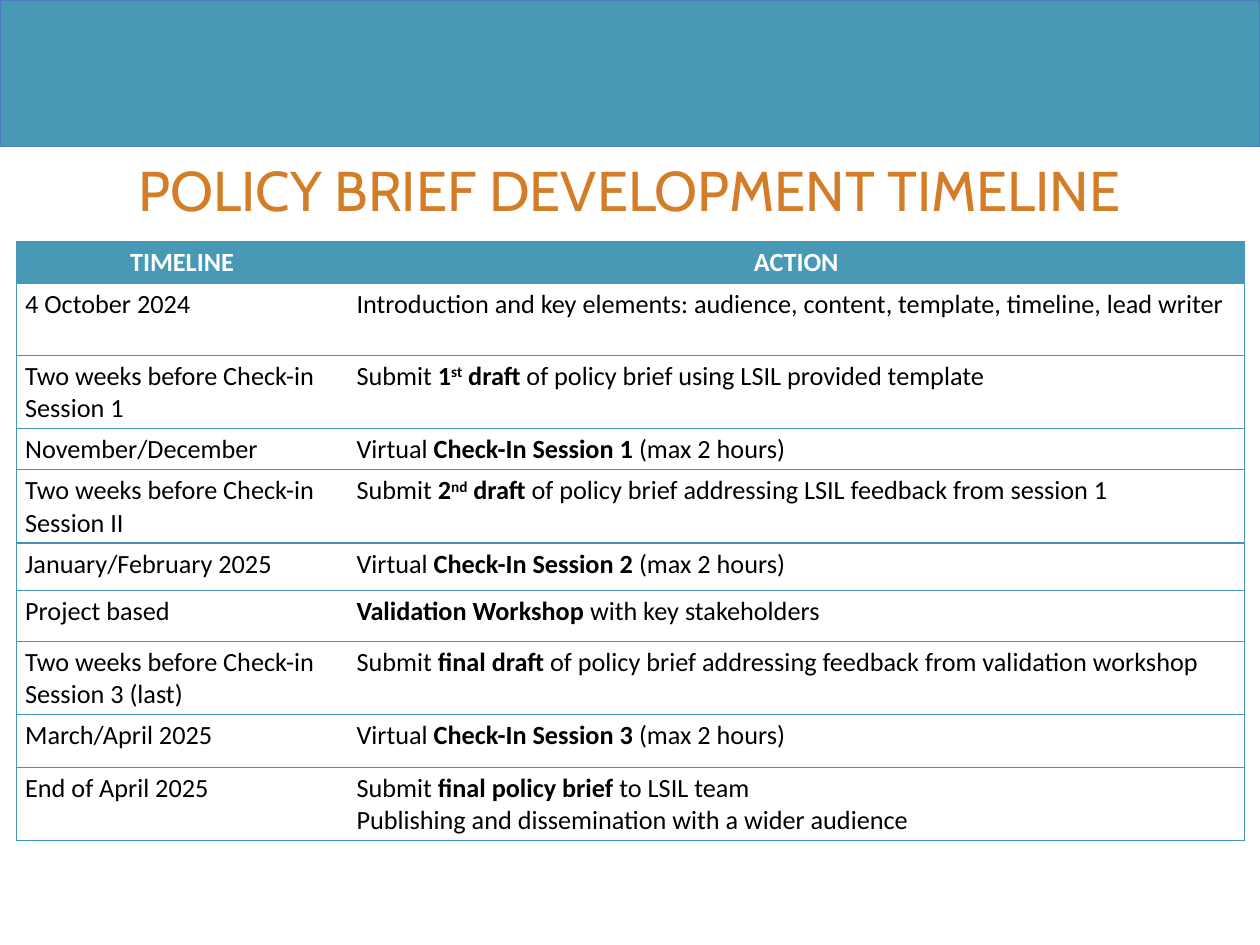
from dataclasses import dataclass

from lxml import etree
from pptx import Presentation
from pptx.dml.color import RGBColor
from pptx.enum.shapes import MSO_SHAPE
from pptx.enum.text import MSO_ANCHOR, PP_ALIGN
from pptx.oxml.ns import qn
from pptx.util import Inches, Pt

RECTANGLE = MSO_SHAPE.RECTANGLE
MIDDLE = MSO_ANCHOR.MIDDLE
LEFT, CENTER = PP_ALIGN.LEFT, PP_ALIGN.CENTER
WIDTH, HEIGHT = 10, 7.5


@dataclass(frozen=True)
class Theme:
    band: str = "4799B5"
    band_line: str = "4B7EBC"
    rule: str = "4397B4"
    title: str = "D37D28"
    text: str = "000000"
    paper: str = "FFFFFF"
    title_font: str = "Cabin"
    body_font: str = "Calibri"
    title_size: int = 32
    body_size: int = 15
    line_width: float = 0.75


THEME = Theme()
COLUMN_WIDTHS = (2.63, 7.12)
HEADINGS = ("TIMELINE", "ACTION")
# Row height, time, action lines; *bold* and ^superscript^ mark the runs.
STEPS = (
    (0.57, "4 October 2024",
     "Introduction and key elements: audience, content, template, timeline, lead writer"),
    (0.57, "Two weeks before Check-in Session 1",
     "Submit *1^st^ draft* of policy brief using LSIL provided template"),
    (0.33, "November/December", "Virtual *Check-In Session 1 *(max 2 hours)"),
    (0.57, "Two weeks before Check-in Session II",
     "Submit *2^nd^ draft* of policy brief addressing LSIL feedback from session 1"),
    (0.38, "January/February 2025", "Virtual *Check-In Session 2 *(max 2 hours)"),
    (0.4, "Project based", "*Validation Workshop *with key stakeholders"),
    (0.57, "Two weeks before Check-in Session 3 (last)",
     "Submit *final draft* of policy brief addressing feedback from validation workshop"),
    (0.42, "March/April 2025", "Virtual *Check-In Session 3 *(max 2 hours)"),
    (0.57, "End of April 2025",
     "Submit *final policy brief *to LSIL team\n"
     "Publishing and dissemination with a wider audience"),
)


def rgb(value):
    return RGBColor.from_string(value)


def style_font(font, name, size, color, bold=False):
    font.name, font.size, font.bold = name, Pt(size), bold
    font.color.rgb = rgb(color)


def add_band(page):
    band = page.shapes.add_shape(RECTANGLE, 0, 0, Inches(WIDTH), Inches(0.155 * HEIGHT))
    band.shadow.inherit = False
    band.fill.solid()
    band.fill.fore_color.rgb = rgb(THEME.band)
    band.line.color.rgb = rgb(THEME.band_line)
    band.line.width = Pt(THEME.line_width)


def add_title(page, text):
    box = page.shapes.add_textbox(Inches(0.05 * WIDTH), Inches(1.15),
                                  Inches(0.9 * WIDTH), Inches(0.65))
    frame = box.text_frame
    frame.word_wrap = True
    frame.vertical_anchor = MIDDLE
    frame.margin_bottom = 0
    frame.text = text
    para = frame.paragraphs[0]
    para.alignment = CENTER
    style_font(para.runs[0].font, THEME.title_font, THEME.title_size, THEME.title)


def add_marked_runs(para, text, color, all_bold):
    """Turn *bold* and ^superscript^ marks into runs."""
    for index, part in enumerate(text.split("*")):
        for level, piece in enumerate(part.split("^")):
            if not piece:
                continue
            span = para.add_run()
            span.text = piece
            style_font(span.font, THEME.body_font, THEME.body_size, color,
                       all_bold or index % 2 == 1)
            if level % 2:
                span._r.get_or_add_rPr().set("baseline", "30000")


def set_borders(cell, visible):
    properties = cell._tc.get_or_add_tcPr()
    for place, side in enumerate("LRTB"):
        line = etree.Element(qn(f"a:ln{side}"), w=str(Pt(THEME.line_width)))
        if side in visible:
            fill = etree.SubElement(line, qn("a:solidFill"))
            etree.SubElement(fill, qn("a:srgbClr"), val=THEME.rule)
        else:
            etree.SubElement(line, qn("a:noFill"))
        properties.insert(place, line)


def fill_cell(cell, text, side, header):
    cell.margin_left = cell.margin_right = Inches(0.07)
    cell.margin_top = cell.margin_bottom = Inches(0.04)
    cell.fill.solid()
    cell.fill.fore_color.rgb = rgb(THEME.band if header else THEME.paper)
    set_borders(cell, side + "TB")
    frame = cell.text_frame
    for index, line in enumerate(text.split("\n")):
        para = frame.add_paragraph() if index else frame.paragraphs[0]
        para.alignment = CENTER if header else LEFT
        add_marked_runs(para, line, THEME.paper if header else THEME.text, header)


def add_timeline(page):
    rows = ((0.32, *HEADINGS), *STEPS)
    heights = [row[0] for row in rows]
    table = page.shapes.add_table(
        len(rows), len(COLUMN_WIDTHS), Inches(0.13), Inches(1.92),
        Inches(sum(COLUMN_WIDTHS)), Inches(sum(heights))).table
    table.horz_banding = False
    for column, width in zip(table.columns, COLUMN_WIDTHS):
        column.width = Inches(width)
    for index, (height, *texts) in enumerate(rows):
        table.rows[index].height = Inches(height)
        for cell, text, side in zip(table.rows[index].cells, texts, "LR"):
            fill_cell(cell, text, side, header=index == 0)


def main():
    deck = Presentation()
    deck.slide_width, deck.slide_height = Inches(WIDTH), Inches(HEIGHT)
    page = deck.slides.add_slide(deck.slide_layouts[6])
    add_band(page)
    add_title(page, "POLICY BRIEF DEVELOPMENT TIMELINE")
    add_timeline(page)
    deck.save("out.pptx")


if __name__ == "__main__":
    main()
